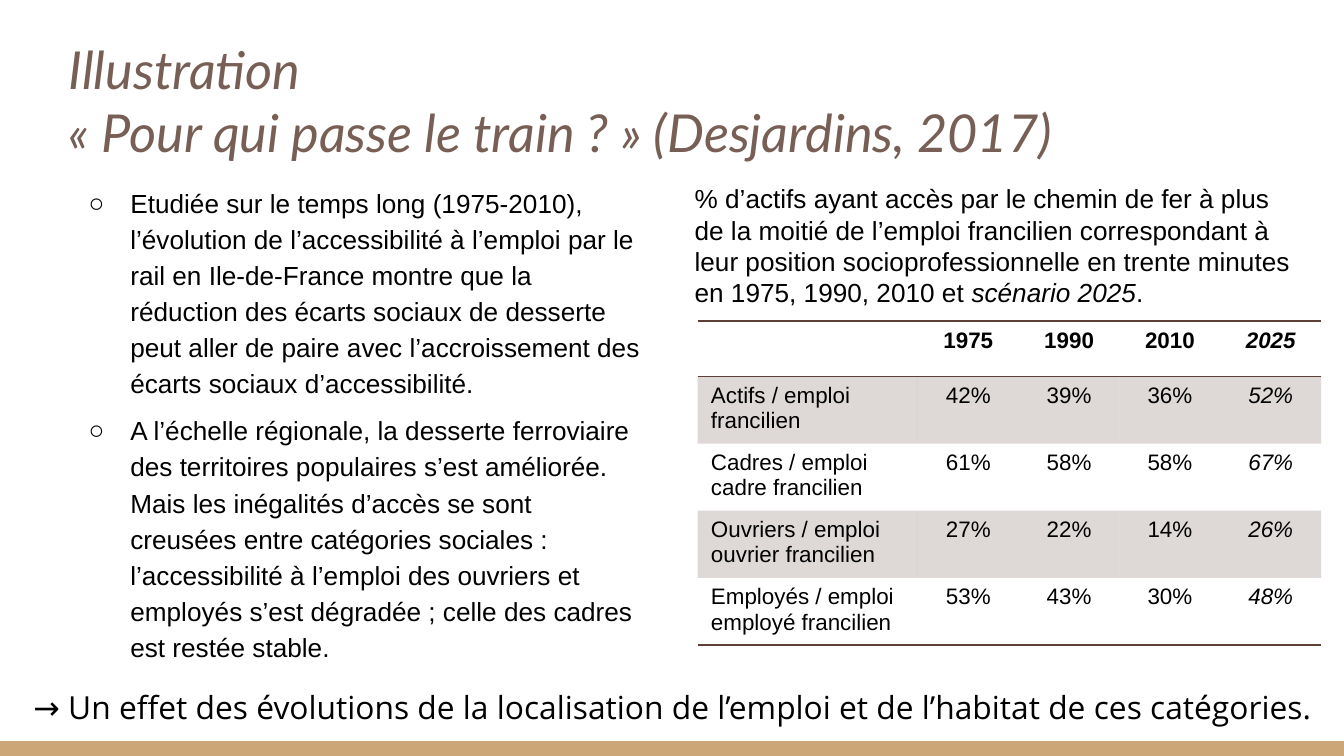
from lxml import etree
from pptx import Presentation
from pptx.dml.color import RGBColor
from pptx.enum.shapes import MSO_SHAPE
from pptx.enum.text import MSO_ANCHOR, MSO_AUTO_SIZE, PP_ALIGN
from pptx.oxml import parse_xml
from pptx.oxml.ns import nsdecls, qn
from pptx.util import Inches, Pt

RECTANGLE = MSO_SHAPE.RECTANGLE
BOTTOM, TOP = MSO_ANCHOR.BOTTOM, MSO_ANCHOR.TOP
NO_FIT = MSO_AUTO_SIZE.NONE
LEFT, CENTER = PP_ALIGN.LEFT, PP_ALIGN.CENTER
PLAIN_TABLE_STYLE = "{2D5ABB26-0587-4C30-8999-92F81FD0307C}"

THEME = {
    "title": ("Lato", 28, "775F55"),
    "body": ("Arial", 14, "000000"),
    "table": ("Arial", 12, "000000"),
    "conclusion": ("Open Sans", 17, "000000"),
    "footer": "CCA677",
    "rule": "5D4037",
}

TITLE = "Illustration\v«\u00a0Pour qui passe le train ?\u00a0» (Desjardins, 2017)"
FINDINGS = [
    "Etudiée sur le temps long (1975-2010), l’évolution de l’accessibilité à l’emploi "
    "par le rail en Ile-de-France montre que la réduction des écarts sociaux de desserte "
    "peut aller de paire avec l’accroissement des écarts sociaux d’accessibilité.",
    "A l’échelle régionale, la desserte ferroviaire des territoires populaires s’est "
    "améliorée. Mais les inégalités d’accès se sont creusées entre catégories sociales : "
    "l’accessibilité à l’emploi des ouvriers et employés s’est dégradée ; celle des "
    "cadres est restée stable.",
]
CAPTION = [
    "% d’actifs ayant accès par le chemin de fer à plus de la moitié de l’emploi francilien "
    "correspondant à leur position socioprofessionnelle en trente minutes en 1975, 1990, 2010 et ",
    "scénario 2025",
    ".",
]
CONCLUSION = ("→ Un effet des évolutions de la localisation de l’emploi et de l’habitat "
              "de ces catégories.")
ACCESS = [
    ["", "1975", "1990", "2010", "2025"],
    ["Actifs / emploi francilien", "42%", "39%", "36%", "52%"],
    ["Cadres / emploi cadre francilien", "61%", "58%", "58%", "67%"],
    ["Ouvriers / emploi ouvrier francilien", "27%", "22%", "14%", "26%"],
    ["Employés / emploi employé francilien", "53%", "43%", "30%", "48%"],
]


def style_runs(para, role, bold=False, italic=False):
    name, size, color = THEME[role]
    for span in para.runs:
        span.font.name, span.font.size = name, Pt(size)
        span.font.color.rgb = RGBColor.from_string(color)
        span.font.bold, span.font.italic = bold, italic


def place(box, left, top, width, height, inset=None):
    """Position a text shape, wrap its text and optionally set equal insets."""
    box.left, box.top, box.width, box.height = map(Inches, (left, top, width, height))
    frame = box.text_frame
    frame.word_wrap = True
    frame.auto_size = NO_FIT
    if inset is not None:
        frame.margin_left = frame.margin_right = Inches(inset)
        frame.margin_top = frame.margin_bottom = Inches(inset)
    return frame


deck = Presentation()
deck.slide_width = Inches(10)
deck.slide_height = deck.slide_width * 9 // 16
page = deck.slides.add_slide(deck.slide_layouts[1])
shapes = page.shapes

# Footer band
band_height = Inches(0.11)
footer = shapes.add_shape(
    RECTANGLE, 0, deck.slide_height - band_height, deck.slide_width, band_height)
footer.shadow.inherit = False
footer.fill.solid()
footer.fill.fore_color.rgb = RGBColor.from_string(THEME["footer"])
footer.line.fill.background()

# Title
frame = place(shapes.title, 0.41, 0.27, 9.32, 1.04, inset=0.1)
frame.vertical_anchor = BOTTOM
frame.text = TITLE
frame.paragraphs[0].alignment = LEFT
style_runs(frame.paragraphs[0], "title", italic=True)

# Findings
frame = place(page.placeholders[1], 0.06, 1.26, 4.83, 3.81, inset=0.1)
frame.vertical_anchor = TOP
frame.text = "\n".join(FINDINGS)
for para in frame.paragraphs:
    para.level = 1
    para.line_spacing = 1.15
    para.space_before = Pt(6)
    style_runs(para, "body")
    properties = para._p.get_or_add_pPr()
    properties.set("marL", str(Inches(0.81)))
    properties.set("indent", str(Inches(-0.31)))
    bullet_color = etree.SubElement(properties, qn("a:buClr"))
    etree.SubElement(bullet_color, qn("a:srgbClr"), val=THEME["body"][2])
    etree.SubElement(properties, qn("a:buFont"), typeface="Arial")
    etree.SubElement(properties, qn("a:buChar"), char="○")

# Conclusion
frame = place(shapes.add_textbox(0, 0, 0, 0), 0.15, 5.07, 9.73, 0.39)
frame.text = CONCLUSION
frame.paragraphs[0].space_before = Pt(6)
style_runs(frame.paragraphs[0], "conclusion")

# Table
column_widths = [1.64] + [0.75] * 4
row_heights = [0.41] + [0.5] * 4
table_frame = shapes.add_table(
    len(row_heights), len(column_widths), Inches(5.19), Inches(2.39),
    Inches(sum(column_widths)), Inches(sum(row_heights)))
table = table_frame.table
table.first_row = table.horz_banding = False
table._tbl.tblPr.find(qn("a:tableStyleId")).text = PLAIN_TABLE_STYLE
for column, width in zip(table.columns, column_widths):
    column.width = Inches(width)
for row, height in zip(table.rows, row_heights):
    row.height = Inches(height)

last = len(ACCESS) - 1
for r, values in enumerate(ACCESS):
    ruled_sides = {0: ["lnT", "lnB"], last: ["lnB"]}.get(r, [])
    for c, value in enumerate(values):
        cell = table.cell(r, c)
        cell.text = value
        para = cell.text_frame.paragraphs[0]
        para.alignment = CENTER if c else LEFT
        style_runs(para, "table", bold=r == 0, italic=c == len(values) - 1)
        if r % 2:
            cell.fill.solid()
            cell.fill.fore_color.rgb = RGBColor.from_string(THEME["rule"])
            tint = cell._tc.tcPr.find(".//" + qn("a:srgbClr"))
            etree.SubElement(tint, qn("a:alpha"), val="20000")
        else:
            cell.fill.background()
        for position, side in enumerate(ruled_sides):
            cell._tc.tcPr.insert(position, parse_xml(
                f'<a:{side} {nsdecls("a")} w="{Pt(1)}"><a:solidFill>'
                f'<a:srgbClr val="{THEME["rule"]}"/></a:solidFill></a:{side}>'))

# Table caption
frame = place(shapes.add_textbox(0, 0, 0, 0), 5.07, 1.31, 4.68, 1.04)
para = frame.paragraphs[0]
for text in CAPTION:
    para.add_run().text = text
style_runs(para, "body")
para.runs[1].font.italic = True

deck.save("out.pptx")
